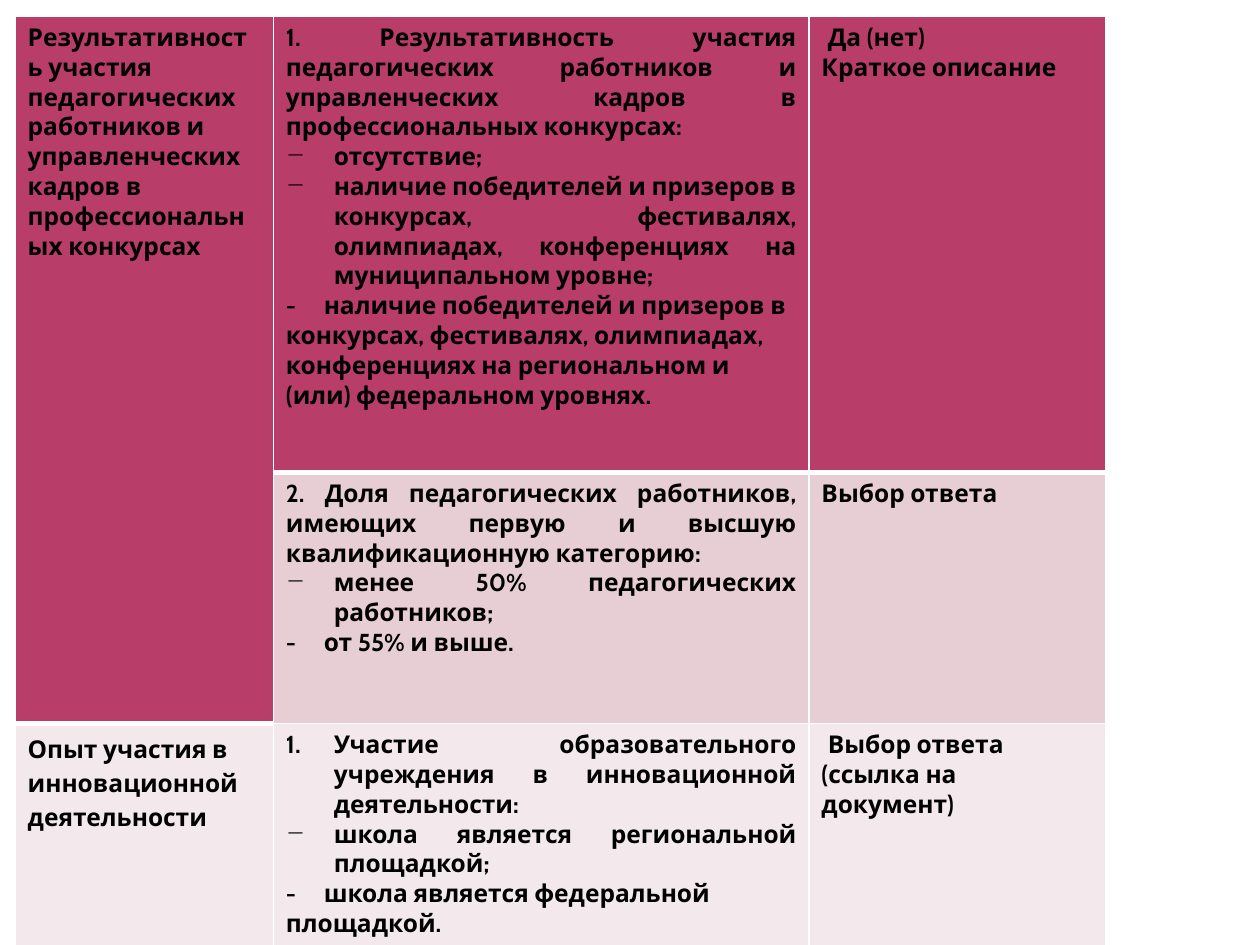
"""Build a slide with the table of staff competition and innovation criteria."""
from dataclasses import dataclass

from lxml import etree
from pptx import Presentation
from pptx import util as u
from pptx.dml import color
from pptx.enum import text
from pptx.oxml import ns


@dataclass(frozen=True)
class Theme:
    """Colours, font and sizes of the slide."""
    font: str = "Cabin"
    size: int = 14
    ink: str = "000000"
    border: str = "FFFFFF"
    thin: int = 1
    thick: int = 3
    row_fills: tuple = ("B83D68", "E6CED4", "F3E8EB")


THEME = Theme()
COLUMN_WIDTHS = (2.05, 4.25, 2.36)
ROW_HEIGHTS = (3.62, 1.99, 1.76)
HANGING = 0.38
JUSTIFIED = {"justify", "dash", "number", "inset"}

CONTENT = {
    (0, 0): [("plain", "Результативность участия педагогических работников и "
                       "управленческих кадров в профессиональных конкурсах")],
    (0, 1): [
        ("justify", "1. Результативность участия педагогических работников и "
                    "управленческих кадров в профессиональных конкурсах:"),
        ("dash", "отсутствие;"),
        ("dash", "наличие победителей и призеров в конкурсах, фестивалях, "
                 "олимпиадах, конференциях на муниципальном уровне;"),
        ("tabbed", "-\tналичие победителей и призеров в конкурсах, фестивалях, "
                   "олимпиадах, конференциях на региональном и (или) "
                   "федеральном уровнях."),
    ],
    (0, 2): [("inset", "Да (нет)"), ("plain", "Краткое описание")],
    (1, 1): [
        ("justify", "2. Доля педагогических работников, имеющих первую и "
                    "высшую квалификационную категорию:"),
        ("dash", "менее 50% педагогических работников;"),
        ("tabbed", "-\tот 55% и выше."),
    ],
    (1, 2): [("plain", "Выбор ответа")],
    (2, 0): [("spaced", "Опыт участия в инновационной деятельности")],
    (2, 1): [
        ("number", "Участие образовательного учреждения в инновационной "
                   "деятельности:"),
        ("dash", "школа является региональной площадкой;"),
        ("tabbed", "-\tшкола является федеральной площадкой."),
    ],
    (2, 2): [("inset", "Выбор ответа"), ("plain", "(ссылка на документ)")],
}


def add_child(parent, tag, **attributes):
    """Append a drawing element with the given attributes."""
    return etree.SubElement(parent, ns.qn(tag), attributes)


def format_paragraph(paragraph, kind):
    """Apply the indent, bullet, tab and spacing of a paragraph kind."""
    properties = paragraph._p.get_or_add_pPr()
    if kind in ("dash", "number"):
        properties.set("marL", str(u.Inches(HANGING)))
        properties.set("indent", str(-u.Inches(HANGING)))
    if kind == "dash":
        add_child(properties, "a:buChar", char="−")
    elif kind == "number":
        add_child(properties, "a:buAutoNum", type="arabicPeriod")
    elif kind == "inset":
        properties.set("marL", str(u.Inches(0.05)))
    elif kind == "tabbed":
        tabs = add_child(properties, "a:tabLst")
        add_child(tabs, "a:tab", pos=str(u.Inches(0.3)), algn="l")
    elif kind == "spaced":
        paragraph.line_spacing = 1.15
        paragraph.space_after = u.Pt(10)
    if kind in JUSTIFIED:
        paragraph.alignment = text.PP_ALIGN.JUSTIFY


def fill_text(cell, entries):
    """Write the paragraphs of a cell and format their runs."""
    frame = cell.text_frame
    frame.text = "\n".join(wording for kind, wording in entries)
    for paragraph, (kind, wording) in zip(frame.paragraphs, entries):
        format_paragraph(paragraph, kind)
        for run in paragraph.runs:
            run.font.name = THEME.font
            run.font.size = u.Pt(THEME.size)
            run.font.bold = True
            run.font.color.rgb = color.RGBColor.from_string(THEME.ink)


def set_borders(cell, bottom):
    """Draw the four cell borders, with a given bottom width in points."""
    properties = cell._tc.get_or_add_tcPr()
    widths = {"L": THEME.thin, "R": THEME.thin, "T": THEME.thin, "B": bottom}
    for position, (side, width) in enumerate(widths.items()):
        line = add_child(properties, f"a:ln{side}", w=str(u.Pt(width)))
        add_child(add_child(line, "a:solidFill"), "a:srgbClr", val=THEME.border)
        properties.insert(position, line)


def add_criteria_table(slide):
    """Add the criteria table with its merged first column."""
    frame = slide.shapes.add_table(
        len(ROW_HEIGHTS), len(COLUMN_WIDTHS), u.Inches(0.12), u.Inches(0.13),
        u.Inches(sum(COLUMN_WIDTHS)), u.Inches(sum(ROW_HEIGHTS)))
    table = frame.table
    table.first_row = table.horz_banding = False
    for column, width in zip(table.columns, COLUMN_WIDTHS):
        column.width = u.Inches(width)
    for row, height in zip(table.rows, ROW_HEIGHTS):
        row.height = u.Inches(height)
    table.cell(0, 0).merge(table.cell(1, 0))
    for (row, column), entries in CONTENT.items():
        cell = table.cell(row, column)
        cell.fill.solid()
        cell.fill.fore_color.rgb = color.RGBColor.from_string(THEME.row_fills[row])
        set_borders(cell, THEME.thick if row == 0 else THEME.thin)
        fill_text(cell, entries)


def main():
    """Create the presentation and save it."""
    presentation = Presentation()
    presentation.slide_width = u.Inches(10)
    presentation.slide_height = u.Inches(7.5)
    slide = presentation.slides.add_slide(presentation.slide_layouts[6])
    add_criteria_table(slide)
    presentation.save("out.pptx")


if __name__ == "__main__":
    main()
